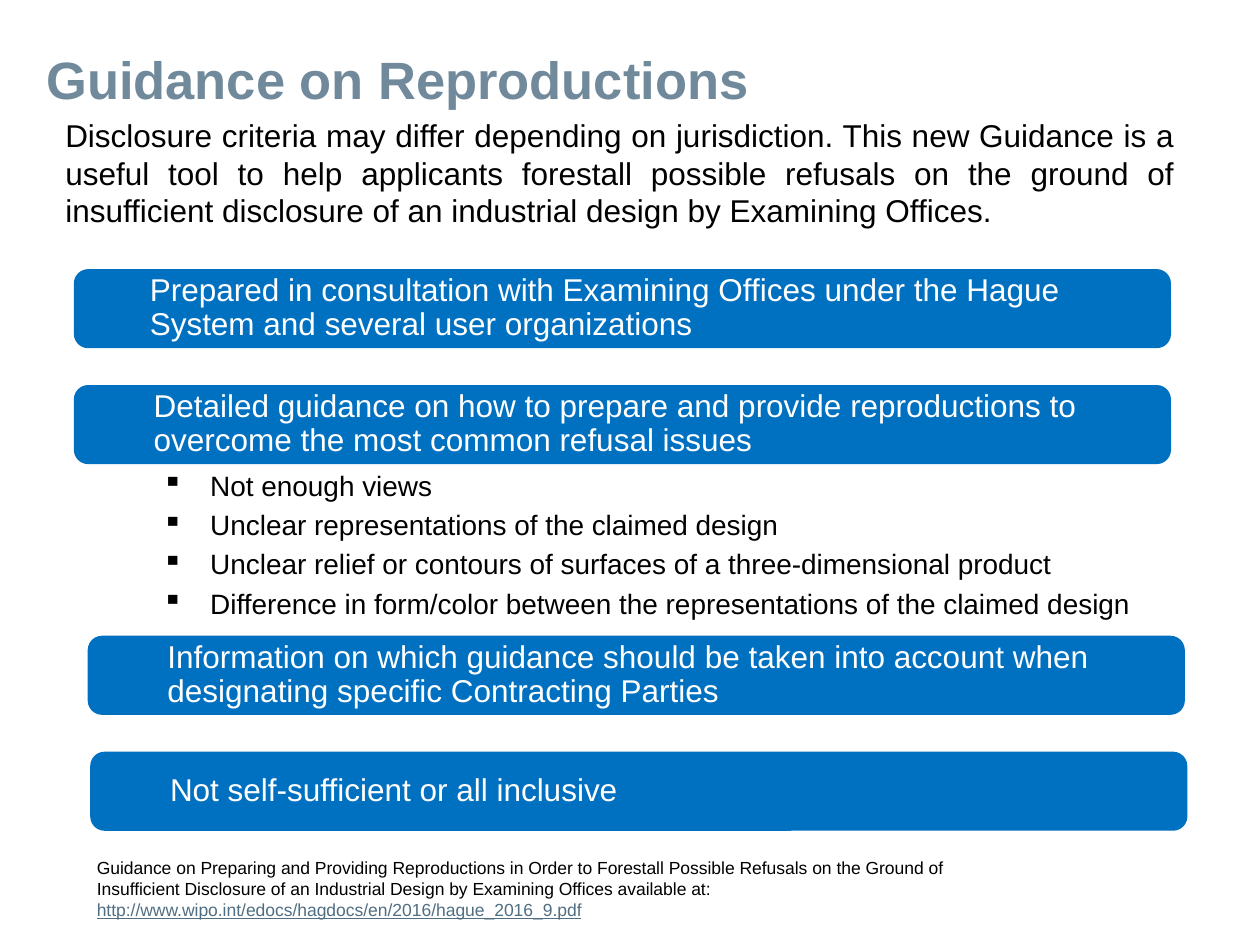
from dataclasses import dataclass

from lxml.etree import SubElement
from pptx import Presentation
from pptx.dml.color import RGBColor
from pptx.enum.shapes import MSO_SHAPE as Shape
from pptx.enum.text import MSO_ANCHOR as Anchor, PP_ALIGN as Align
from pptx.oxml.ns import qn
from pptx.slide import Slide
from pptx.util import Inches, Pt

INTRO = (
    "Disclosure criteria may differ depending on jurisdiction. This new Guidance "
    "is a useful tool to help applicants forestall possible refusals on the ground "
    "of insufficient disclosure of an industrial design by Examining Offices."
)
# left, top, text inset, wording
BARS = [
    (0.6, 2.15, 0.56, "Prepared in consultation with Examining Offices under the "
                      "Hague System and several user organizations"),
    (0.6, 3.07, 0.59, "Detailed guidance on how to prepare and provide "
                      "reproductions to overcome the most common refusal issues"),
    (0.71, 5.06, 0.59, "Information on which guidance should be taken into account "
                       "when designating specific Contracting Parties"),
    (0.73, 5.98, 0.59, "Not self-sufficient or all inclusive"),
]
ISSUES = [
    "Not enough views",
    "Unclear representations of the claimed design",
    "Unclear relief or contours of surfaces of a three-dimensional product",
    "Difference in form/color between the representations of the claimed design",
]
SOURCE = (
    "Guidance on Preparing and Providing Reproductions in Order to Forestall "
    "Possible Refusals on the Ground of Insufficient Disclosure of an Industrial "
    "Design by Examining Offices available at: "
)
SOURCE_ADDRESS = "http://www.wipo.int/edocs/hagdocs/en/2016/hague_2016_9.pdf"


def color(value):
    return RGBColor.from_string(value)


@dataclass
class GuidancePage:
    page: Slide
    font: str = "Arial"
    text: str = "000000"
    title_color: str = "70899B"
    bar_color: str = "0070C0"
    bar_text: str = "FFFFFF"
    link: str = "506E82"

    def set_font(self, para, size, shade, bold=False):
        para.font.name = self.font
        para.font.size = Pt(size)
        para.font.bold = bold
        para.font.color.rgb = color(shade)

    def frame(self, left, top, width, height):
        """Add a wrapping text box and return its text frame."""
        box = self.page.shapes.add_textbox(
            Inches(left), Inches(top), Inches(width), Inches(height))
        box.text_frame.word_wrap = True
        return box.text_frame

    def title(self, wording):
        frame = self.frame(0.27, 0, 5.89, 1.25)
        frame.vertical_anchor = Anchor.MIDDLE
        para = frame.paragraphs[0]
        para.text = wording
        self.set_font(para, 30, self.title_color, bold=True)

    def intro(self, wording):
        para = self.frame(0.42, 0.87, 9, 1.13).paragraphs[0]
        para.text = wording
        para.alignment = Align.JUSTIFY
        self.set_font(para, 18, self.text)

    def bar(self, left, top, inset, wording):
        bar = self.page.shapes.add_shape(
            Shape.ROUNDED_RECTANGLE, Inches(left), Inches(top), Inches(8.68), Inches(0.6))
        bar.shadow.inherit = False
        bar.fill.solid()
        bar.fill.fore_color.rgb = bar.line.color.rgb = color(self.bar_color)
        bar.line.width = Pt(2)
        frame = bar.text_frame
        frame.word_wrap = True
        frame.vertical_anchor = Anchor.MIDDLE
        frame.margin_left = Inches(inset)
        frame.margin_top = frame.margin_right = frame.margin_bottom = Inches(0.06)
        para = frame.paragraphs[0]
        para.text = wording
        para.alignment = Align.LEFT
        para.line_spacing = 0.9
        self.set_font(para, 18, self.bar_text)

    def bullets(self, items):
        frame = self.frame(1.19, 3.67, 8.81, 1.27)
        for index, item in enumerate(items):
            para = frame.add_paragraph() if index else frame.paragraphs[0]
            para.text = item
            para.alignment = Align.JUSTIFY
            if index:
                para.space_before = Pt(3.2)
            properties = para._p.get_or_add_pPr()
            properties.set("marL", str(Inches(0.38)))
            properties.set("indent", str(-Inches(0.38)))
            SubElement(properties, qn("a:buChar")).set("char", "▪")
            self.set_font(para, 16, self.text)

    def source(self, wording, address):
        para = self.frame(0.67, 6.75, 7.33, 0.61).paragraphs[0]
        para.add_run().text = wording
        span = para.add_run()
        span.text = address
        span.font.underline = True
        span.font.color.rgb = color(self.link)
        self.set_font(para, 10, self.text)


def main():
    deck = Presentation()
    deck.slide_width, deck.slide_height = Inches(10), Inches(7.5)
    guidance = GuidancePage(deck.slides.add_slide(deck.slide_layouts[6]))
    guidance.title("Guidance on Reproductions")
    guidance.intro(INTRO)
    for bar in BARS:
        guidance.bar(*bar)
    guidance.bullets(ISSUES)
    guidance.source(SOURCE, SOURCE_ADDRESS)
    deck.save("out.pptx")


if __name__ == "__main__":
    main()
